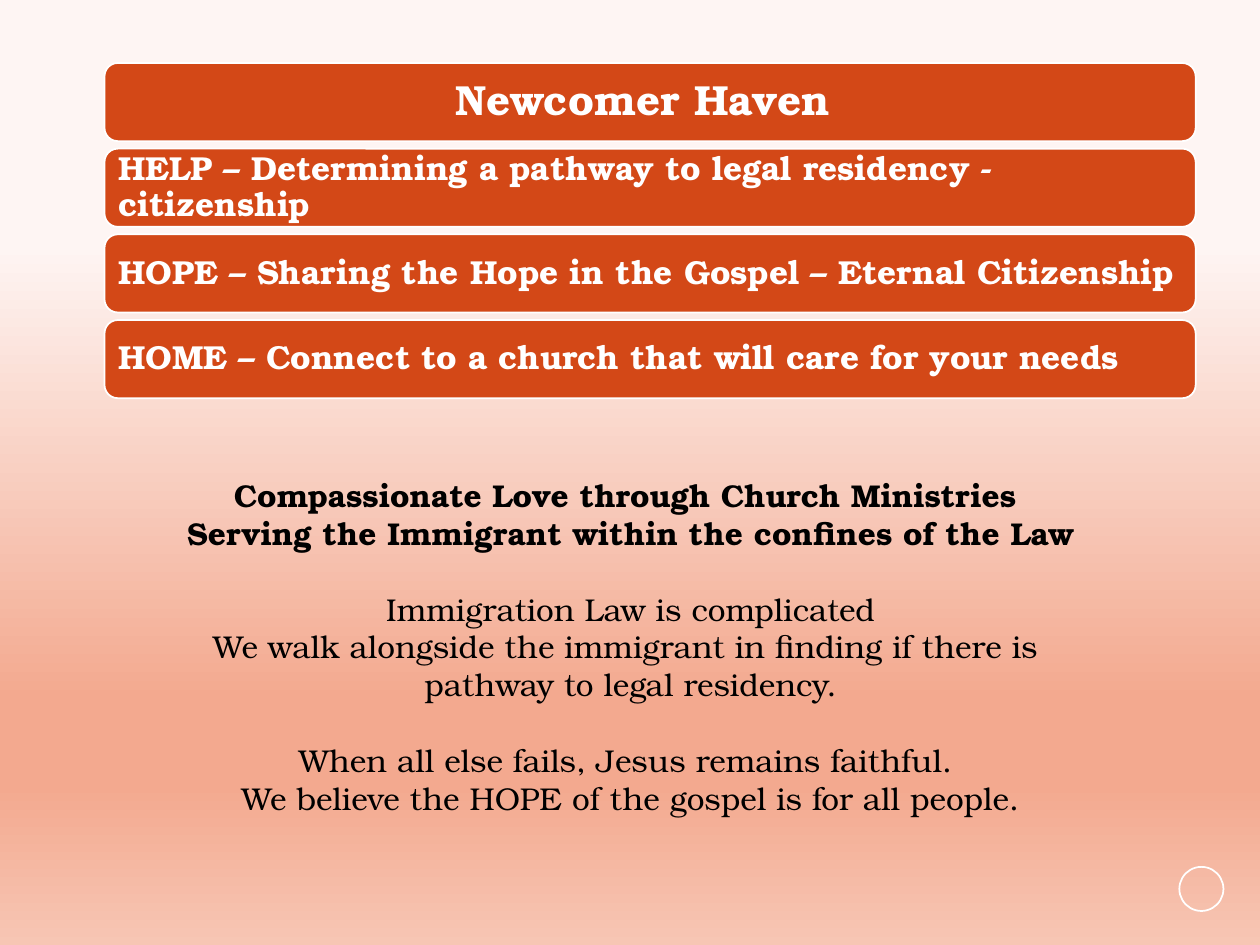
"""Build the Newcomer Haven slide with banner rows and a ministry statement."""
from dataclasses import dataclass

from lxml import etree
from pptx import Presentation
from pptx import util as u
from pptx.dml.color import RGBColor
from pptx.enum import shapes, text
from pptx.oxml.ns import qn
from pptx.slide import Slide
from pptx.text.text import _Paragraph as Paragraph


@dataclass(frozen=True)
class Theme:
    font: str = "TeX Gyre Bonum"
    banner: str = "D34817"
    white: str = "FFFFFF"
    black: str = "000000"
    title_size: int = 24
    banner_size: int = 19
    body_size: int = 18
    gradient: tuple = ((26, "FEF5F3"), (74, "F3A98F"), (83, "F3A98F"), (100, "F7C6B4"))


@dataclass(frozen=True)
class Banner:
    wording: str
    size: int
    inset: float = 0.08
    alignment: text.PP_ALIGN = text.PP_ALIGN.LEFT


@dataclass(frozen=True)
class Line:
    wording: str
    bold: bool = False
    gap: float = 0


THEME = Theme()
BANNERS = (
    Banner("Newcomer Haven ", THEME.title_size, 0.1, text.PP_ALIGN.CENTER),
    Banner("HELP – Determining a pathway to legal residency - citizenship", THEME.banner_size),
    Banner("HOPE – Sharing the Hope in the Gospel – Eternal Citizenship", THEME.banner_size),
    Banner("HOME – Connect to a church that will care for your needs", THEME.banner_size),
)
STATEMENT = (
    Line("Compassionate Love through Church Ministries ", bold=True),
    Line("Serving the Immigrant within the confines of the Law", bold=True),
    Line("Immigration Law is complicated", gap=21.6),
    Line("We walk alongside the immigrant in finding if there is "),
    Line("pathway to legal residency."),
    Line("When all else fails, Jesus remains faithful. ", gap=21.6),
    Line("We believe the HOPE of the gospel is for all people."),
)


def paint_background(slide: Slide) -> None:
    fill = slide.background.fill
    fill.gradient()
    fill.gradient_angle = 270
    stops = slide.background._cSld.find(".//" + qn("a:gsLst"))
    for stop in list(stops):
        stops.remove(stop)
    for position, color in THEME.gradient:
        stop = etree.SubElement(stops, qn("a:gs"), pos=str(position * 1000))
        etree.SubElement(stop, qn("a:srgbClr"), val=color)


def style(paragraph: Paragraph, size: int, color: str, bold: bool) -> None:
    for run in paragraph.runs:
        run.font.name = THEME.font
        run.font.size = u.Pt(size)
        run.font.bold = bold
        run.font.color.rgb = RGBColor.from_string(color)


def add_outlined(slide: Slide, kind: shapes.MSO_SHAPE, left: float, top: float,
                 width: float, height: float):
    shape = slide.shapes.add_shape(
        kind, u.Inches(left), u.Inches(top), u.Inches(width), u.Inches(height))
    shape.shadow.inherit = False
    shape.fill.background()
    shape.line.color.rgb = RGBColor.from_string(THEME.white)
    shape.line.width = u.Pt(1)
    return shape


def add_banner(slide: Slide, banner: Banner, top: float) -> None:
    shape = add_outlined(slide, shapes.MSO_SHAPE.ROUNDED_RECTANGLE, 0.83, top, 8.66, 0.62)
    shape.adjustments[0] = 0.17
    shape.fill.solid()
    shape.fill.fore_color.rgb = RGBColor.from_string(THEME.banner)
    frame = shape.text_frame
    frame.text = banner.wording
    frame.word_wrap = True
    frame.vertical_anchor = text.MSO_ANCHOR.MIDDLE
    inset = u.Inches(banner.inset)
    frame.margin_left = frame.margin_right = inset
    frame.margin_top = frame.margin_bottom = inset
    paragraph = frame.paragraphs[0]
    paragraph.alignment = banner.alignment
    paragraph.line_spacing = 0.9
    style(paragraph, banner.size, THEME.white, True)


def add_statement(slide: Slide, lines: tuple[Line, ...]) -> None:
    box = slide.shapes.add_textbox(
        u.Inches(1.17), u.Inches(3.73), u.Inches(7.67), u.Inches(3.43))
    frame = box.text_frame
    frame.word_wrap = True
    frame.text = "\n".join(line.wording for line in lines)
    for paragraph, line in zip(frame.paragraphs, lines):
        paragraph.alignment = text.PP_ALIGN.CENTER
        if line.gap:
            paragraph.space_before = u.Pt(line.gap)
        style(paragraph, THEME.body_size, THEME.black, line.bold)


def main() -> None:
    presentation = Presentation()
    presentation.slide_width = u.Inches(10)
    presentation.slide_height = u.Inches(7.5)
    slide = presentation.slides.add_slide(presentation.slide_layouts[6])
    paint_background(slide)
    add_outlined(slide, shapes.MSO_SHAPE.OVAL, 9.36, 6.88, 0.35, 0.35)
    add_statement(slide, STATEMENT)
    for index, banner in enumerate(BANNERS):
        add_banner(slide, banner, 0.5 + 0.68 * index)
    presentation.save("out.pptx")


if __name__ == "__main__":
    main()
